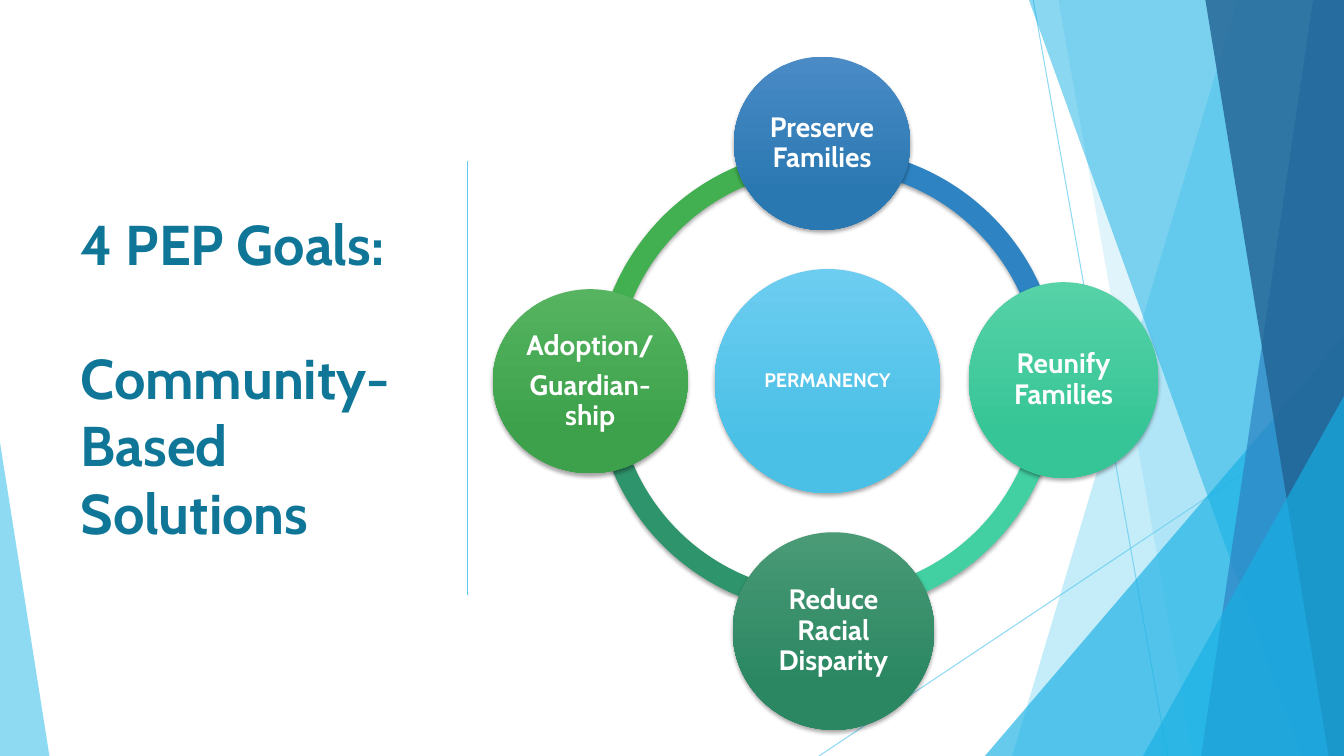
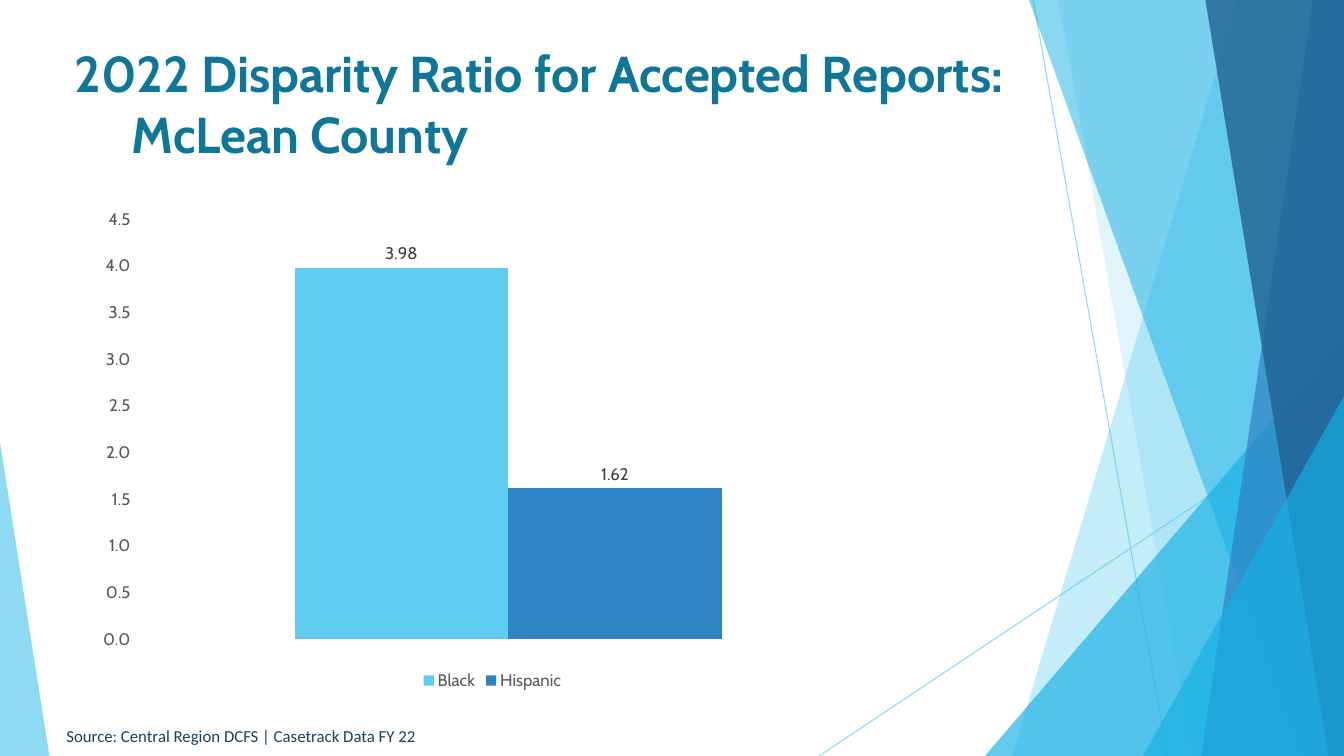
import lxml.etree
import pptx
import pptx.chart.data
import pptx.dml.color
import pptx.enum.chart
import pptx.enum.shapes
import pptx.enum.text
import pptx.oxml.ns
import pptx.util

Pt = pptx.util.Pt
SHAPES = pptx.enum.shapes.MSO_SHAPE
ALIGN = pptx.enum.text.PP_ALIGN
ANCHOR = pptx.enum.text.MSO_ANCHOR
AUTO_SIZE = pptx.enum.text.MSO_AUTO_SIZE

WIDTH, HEIGHT = 960, 540
FONT = "Cabin"
COLORS = {
    "title": "0F7698", "source": "174162", "white": "FFFFFF", "black": "000000",
    "axis": "595959", "label": "404040",
    "sky": "5FCBEF", "cyan": "17B0E4", "blue": "2E83C3", "navy": "226292",
    "green": "42B051", "forest": "2E946B", "mint": "42D0A2",
}
# Top x, bottom x, colour and opacity of each band that runs to the right edge
BANDS_BACK = [(884, 723, "sky", 36), (756, 852, "sky", 20)]
BANDS_FRONT = [(735, 929.5, "cyan", 50), (938, 858, "blue", 70), (861, 949, "navy", 80)]
RING = (424.8, 105.8, 332.6, 332.6)
# Start and end angle, clockwise from the right
ARCS = [(180, 268.6, "green"), (88.6, 180, "forest"), (0, 88.6, "mint"), (268.6, 0, "blue")]
# Lines, place, gradient top and bottom, text size
CIRCLES = [
    (["PERMANENCY"], (510.5, 192.2, 161.3, 160), "6CCDF0", "4BC0E6", 14),
    (["Preserve Families"], (524.2, 40.5, 126, 123.8), "4A8BC6", "2A78B2", 20),
    (["Reunify Families"], (692, 201.6, 135.4, 139.7), "56D2A7", "36C596", 20),
    (["Reduce Racial Disparity"], (523.4, 380.2, 144, 141.1), "4A9A76", "2A8762", 20),
    (["Adoption/", "Guardian-ship"], (352, 206.6, 139.3, 131.4), "56B461", "3CA14A", 20),
]


def rgb(name):
    return pptx.dml.color.RGBColor.from_string(COLORS.get(name, name))


def points(values):
    return [Pt(value) for value in values]


def add_xml(parent, tag, **attributes):
    return lxml.etree.SubElement(parent, pptx.oxml.ns.qn(tag), attributes)


def set_opacity(shape, percent):
    color = shape.element.spPr.find(".//" + pptx.oxml.ns.qn("a:srgbClr"))
    add_xml(color, "a:alpha", val=str(percent * 1000))


def style_font(font, color, size, name=FONT, bold=None):
    font.name, font.size, font.bold = name, Pt(size), bold
    font.color.rgb = rgb(color)


def write_text(frame, lines, color, size, name=FONT, bold=None, align=ALIGN.LEFT,
               anchor=ANCHOR.TOP, spacing=None, after=0, auto_size=AUTO_SIZE.NONE):
    """Write one paragraph for each line and return the paragraphs."""
    frame.word_wrap, frame.auto_size, frame.vertical_anchor = True, auto_size, anchor
    paras = []
    for index, line in enumerate(lines):
        para = frame.add_paragraph() if index else frame.paragraphs[0]
        para.alignment, para.line_spacing, para.space_after = align, spacing, Pt(after)
        span = para.add_run()
        span.text = line
        style_font(span.font, color, size, name, bold)
        paras.append(para)
    return paras


def place_title(slide, lines, place, size):
    title = slide.shapes.title
    title.left, title.top, title.width, title.height = points(place)
    return write_text(title.text_frame, lines, "title", size, bold=True, anchor=ANCHOR.MIDDLE)


def fill_plain(shape, color):
    shape.fill.solid()
    shape.fill.fore_color.rgb = rgb(color)
    shape.line.fill.background()
    shape.shadow.inherit = False


def add_line(slide, ends, color, width):
    line = slide.shapes.add_connector(pptx.enum.shapes.MSO_CONNECTOR.STRAIGHT, *points(ends))
    line.line.color.rgb = rgb(color)
    line.line.width = Pt(width)
    add_xml(line.element.spPr, "a:effectLst")
    return line


def add_band(slide, top_x, bottom_x, color, opacity):
    builder = slide.shapes.build_freeform(Pt(top_x), 0)
    corners = [(WIDTH, 0), (WIDTH, HEIGHT), (bottom_x, HEIGHT)]
    builder.add_line_segments([points(corner) for corner in corners], close=True)
    band = builder.convert_to_shape()
    fill_plain(band, color)
    set_opacity(band, opacity)


def add_corner(slide, left, top, width, apex, color, opacity):
    """Add a right-angled triangle standing on the slide's lower edge."""
    corner = slide.shapes.add_shape(
        SHAPES.ISOSCELES_TRIANGLE, *points((left, top, width, HEIGHT - top)))
    corner.adjustments[0] = apex
    fill_plain(corner, color)
    set_opacity(corner, opacity)


def add_facets(slide, layout):
    """Draw the facets on the slide, then move them to the layout for every slide."""
    for placeholder in list(layout.placeholders):
        if placeholder.placeholder_format.type != pptx.enum.shapes.PP_PLACEHOLDER.TITLE:
            layout.shapes.element.remove(placeholder.element)
    for ends in [(738, 0, 834, HEIGHT), (WIDTH, 290, 585, HEIGHT)]:
        set_opacity(add_line(slide, ends, "sky", 0.75), 70)
    for band in BANDS_BACK:
        add_band(slide, *band)
    add_corner(slide, 703.5, 240, 256.5, 1, "cyan", 66)
    for band in BANDS_FRONT:
        add_band(slide, *band)
    add_corner(slide, 816.5, 283, 143.5, 1, "cyan", 66)
    add_corner(slide, 0, 316, 35.3, 0, "sky", 70)
    for shape in list(slide.shapes):
        if not shape.is_placeholder:
            layout.shapes.element.append(shape.element)


def add_soft_shadow(shape):
    shape.shadow.inherit = False
    effects = shape.element.spPr.find(pptx.oxml.ns.qn("a:effectLst"))
    shadow = add_xml(effects, "a:outerShdw", blurRad=str(Pt(3)), dist=str(Pt(2)),
                     dir="5400000", rotWithShape="0")
    add_xml(add_xml(shadow, "a:srgbClr", val=COLORS["black"]), "a:alpha", val="35000")


def add_arc(slide, start, end, color):
    arc = slide.shapes.add_shape(SHAPES.BLOCK_ARC, *points(RING))
    for index, value in enumerate((start * 0.6, end * 0.6, 0.046)):
        arc.adjustments[index] = value
    fill_plain(arc, color)
    add_soft_shadow(arc)


def add_circle(slide, lines, place, top_color, bottom_color, size):
    circle = slide.shapes.add_shape(SHAPES.OVAL, *points(place))
    circle.fill.gradient()
    circle.fill.gradient_angle = 270
    stops = zip(circle.fill.gradient_stops, (0, 0.78), (top_color, bottom_color))
    for stop, position, color in stops:
        stop.position = position
        stop.color.rgb = rgb(color)
    circle.line.fill.background()
    add_soft_shadow(circle)
    frame = circle.text_frame
    frame.margin_left = frame.margin_right = frame.margin_top = frame.margin_bottom = Pt(2)
    write_text(frame, lines, "white", size, bold=True, align=ALIGN.CENTER,
               anchor=ANCHOR.MIDDLE, spacing=0.9, after=size * 0.35)


def add_ratio_chart(slide, place, ratios):
    data = pptx.chart.data.CategoryChartData()
    data.categories = ["1"]
    for name, ratio, _ in ratios:
        data.add_series(name, [ratio])
    chart = slide.shapes.add_chart(
        pptx.enum.chart.XL_CHART_TYPE.COLUMN_CLUSTERED, *points(place), data).chart
    style_font(chart.font, "black", 12)
    chart.has_title = False
    chart.has_legend = True
    chart.legend.position = pptx.enum.chart.XL_LEGEND_POSITION.BOTTOM
    chart.legend.include_in_layout = False
    style_font(chart.legend.font, "axis", 12)
    chart.category_axis.visible = False
    axis = chart.value_axis
    axis.has_major_gridlines = False
    axis.major_tick_mark = pptx.enum.chart.XL_TICK_MARK.NONE
    axis.minimum_scale, axis.maximum_scale, axis.major_unit = 0, 4.5, 0.5
    axis.format.line.fill.background()
    axis.tick_labels.number_format = "0.0"
    axis.tick_labels.number_format_is_linked = False
    style_font(axis.tick_labels.font, "axis", 12)
    plot = chart.plots[0]
    plot.gap_width, plot.overlap, plot.vary_by_categories = 150, 0, False
    for series, (_, _, color) in zip(plot.series, ratios):
        series.format.fill.solid()
        series.format.fill.fore_color.rgb = rgb(color)
        labels = series.data_labels
        labels.show_value = True
        labels.position = pptx.enum.chart.XL_LABEL_POSITION.OUTSIDE_END
        labels.number_format = "#,##0.00"
        labels.number_format_is_linked = False
        style_font(labels.font, "label", 12)


def build_goals(slide):
    paras = place_title(slide, ["4 PEP Goals:", "Community-Based Solutions"],
                        (50.4, 64, 265, 411), 40)
    paras[1].space_before = Pt(48)
    add_line(slide, (334, 115, 334, 425), "sky", 1)
    for arc in ARCS:
        add_arc(slide, *arc)
    for circle in CIRCLES:
        add_circle(slide, *circle)


def build_disparity(slide):
    paras = place_title(slide, ["2022 Disparity Ratio for Accepted Reports:", "McLean County"],
                        (46, 21.6, 741, 103.7), 36)
    paras[1]._p.get_or_add_pPr().set("marL", str(Pt(41)))
    source = slide.shapes.add_textbox(*points((40.3, 514.8, 270.7, 21.8)))
    write_text(source.text_frame, ["Source: Central Region DCFS | Casetrack Data FY 22"],
               "source", 12, name="Calibri", auto_size=AUTO_SIZE.SHAPE_TO_FIT_TEXT)
    add_ratio_chart(slide, (62, 142.6, 579.6, 353.5),
                    [("Black", 3.98, "sky"), ("Hispanic", 1.62, "blue")])


def main():
    deck = pptx.Presentation()
    deck.slide_width, deck.slide_height = Pt(WIDTH), Pt(HEIGHT)
    layout = deck.slide_layouts.get_by_name("Title Only")
    goals, disparity = [deck.slides.add_slide(layout) for _ in range(2)]
    add_facets(goals, layout)
    build_goals(goals)
    build_disparity(disparity)
    deck.save("out.pptx")


if __name__ == "__main__":
    main()
